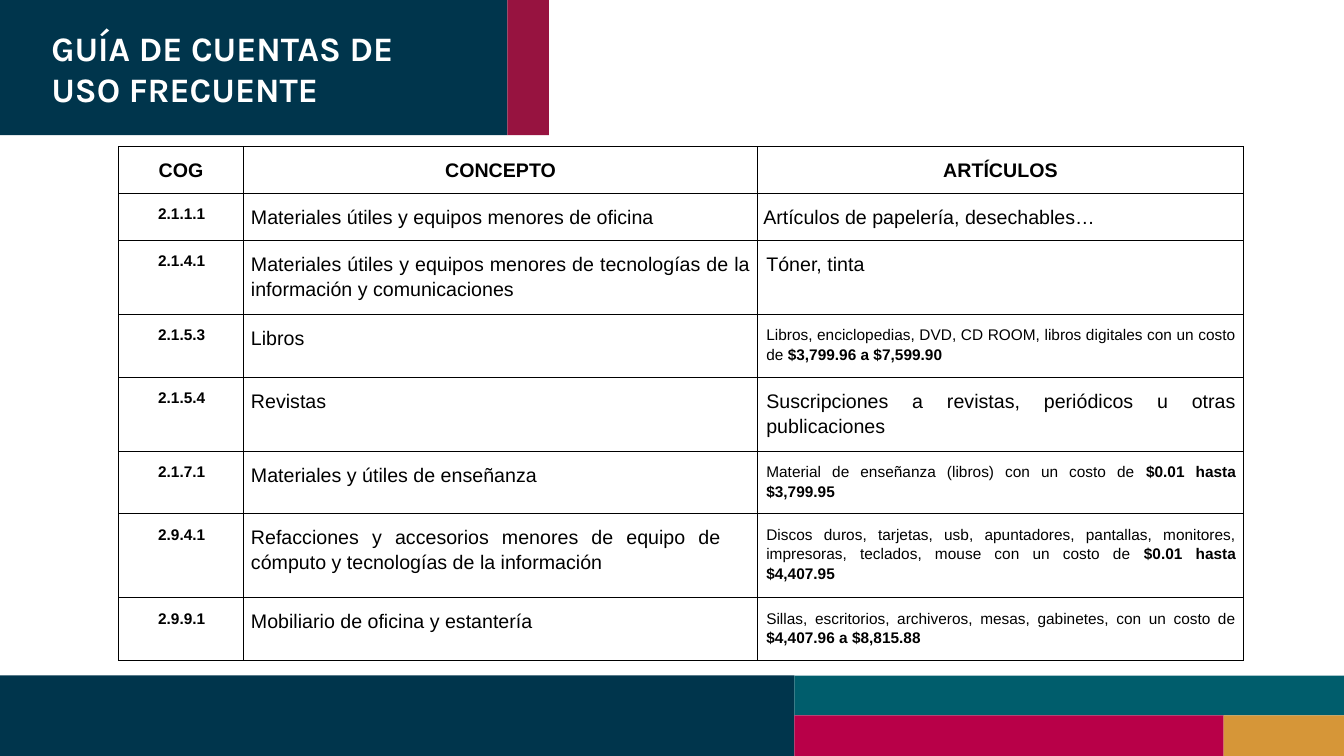
from dataclasses import dataclass

from lxml import etree
from pptx import Presentation
from pptx.dml.color import RGBColor
from pptx.enum import shapes, text
from pptx.oxml import ns
from pptx.util import Pt


@dataclass(frozen=True)
class Theme:
    navy: str = "00354C"
    wine: str = "971340"
    teal: str = "005D6C"
    rose: str = "B80048"
    gold: str = "D69638"
    white: str = "FFFFFF"
    black: str = "000000"
    head: str = "Karla"
    body: str = "Arial"
    title: float = 24.5
    large: float = 14
    small: float = 11


theme = Theme()


def add_run(para, words, size, bold=False, face=theme.body, color=theme.black):
    run = para.add_run()
    run.text = words
    font = run.font
    font.name, font.size, font.bold = face, Pt(size), bold
    font.color.rgb = RGBColor.from_string(color)


def add_edges(cell):
    """Draw a thin black line on all four sides of the cell."""
    props = cell._tc.get_or_add_tcPr()
    for spot, side in enumerate(("lnL", "lnR", "lnT", "lnB")):
        line = etree.Element(ns.qn("a:" + side), w=str(Pt(0.75)))
        fill = etree.SubElement(line, ns.qn("a:solidFill"))
        etree.SubElement(fill, ns.qn("a:srgbClr"), val=theme.black)
        props.insert(spot, line)


prs = Presentation()
prs.slide_width, prs.slide_height = Pt(960), Pt(540)
slide = prs.slides.add_slide(prs.slide_layouts[5])

# Colour bands: left, top, width, height, colour
bands = [
    (0, 0, 362.5, 96.5, theme.navy),
    (362.5, 0, 29.5, 96.5, theme.wine),
    (0, 482.5, 567.5, 57.5, theme.navy),
    (567.5, 482.5, 392.5, 28.5, theme.teal),
    (567.5, 511, 306.5, 29, theme.rose),
    (874, 511, 86, 29, theme.gold),
]
for *box, color in bands:
    band = slide.shapes.add_shape(shapes.MSO_SHAPE.RECTANGLE, *map(Pt, box))
    band.shadow.inherit = False
    band.fill.solid()
    band.fill.fore_color.rgb = RGBColor.from_string(color)
    band.line.fill.background()

# Title, in front of the bands
title = slide.shapes.title
slide.shapes._spTree.append(title._element)
title.left, title.top, title.width, title.height = map(Pt, (36.7, 19.4, 281.5, 59))
frame = title.text_frame
frame.margin_left = frame.margin_right = frame.margin_top = frame.margin_bottom = 0
frame.word_wrap = True
frame.auto_size = text.MSO_AUTO_SIZE.NONE
frame.vertical_anchor = text.MSO_ANCHOR.TOP
para = frame.paragraphs[0]
para.alignment = text.PP_ALIGN.LEFT
add_run(para, "GUÍA DE CUENTAS DE USO FRECUENTE", theme.title, True, theme.head, theme.white)

# Accounts: code, concept, size of the articles, articles, price range
heads = ("COG", "CONCEPTO", "ARTÍCULOS")
big, small = theme.large, theme.small
rows = [
    ("2.1.1.1", "Materiales útiles y equipos menores de oficina",
     big, "Artículos de papelería, desechables…", ""),
    ("2.1.4.1", "Materiales útiles y equipos menores de tecnologías de la "
     "información y comunicaciones", big, "Tóner, tinta", ""),
    ("2.1.5.3", "Libros", small,
     "Libros, enciclopedias, DVD, CD ROOM, libros digitales con un costo de ",
     "$3,799.96 a $7,599.90"),
    ("2.1.5.4", "Revistas", big,
     "Suscripciones a revistas, periódicos u otras publicaciones", ""),
    ("2.1.7.1", "Materiales y útiles de enseñanza", small,
     "Material de enseñanza (libros) con un costo de ", "$0.01 hasta $3,799.95"),
    ("2.9.4.1", "Refacciones y accesorios menores de equipo de cómputo y "
     "tecnologías de la información", small,
     "Discos duros, tarjetas, usb, apuntadores, pantallas, monitores, "
     "impresoras, teclados, mouse con un costo de ", "$0.01 hasta $4,407.95"),
    ("2.9.9.1", "Mobiliario de oficina y estantería", small,
     "Sillas, escritorios, archiveros, mesas, gabinetes, con un costo de ",
     "$4,407.96 a $8,815.88"),
]
wide = (89.3, 367.2, 347)
high = (33.5, 33.5, 53, 44.8, 53, 44.5, 60, 44.8)

grid = slide.shapes.add_table(
    len(high), len(wide), Pt(84.7), Pt(104.6), Pt(sum(wide)), Pt(sum(high))).table
grid.horz_banding = False
for col, width in zip(grid.columns, wide):
    col.width = Pt(width)
for row, height in zip(grid.rows, high):
    row.height = Pt(height)

for cell in grid.iter_cells():
    cell.fill.background()
    add_edges(cell)
    cell.margin_left = cell.margin_right = Pt(5.3)
    cell.margin_top = cell.margin_bottom = Pt(7.2)
    para = cell.text_frame.paragraphs[0]
    para.line_spacing = 1.15
    para.alignment = text.PP_ALIGN.JUSTIFY

for spot, head in enumerate(heads):
    para = grid.cell(0, spot).text_frame.paragraphs[0]
    para.alignment = text.PP_ALIGN.CENTER
    add_run(para, head, big, True)

for spot, (code, concept, size, goods, price) in enumerate(rows, 1):
    first, second, third = (
        grid.cell(spot, col).text_frame.paragraphs[0] for col in range(3))
    first.alignment = text.PP_ALIGN.CENTER
    for para in (first, third):
        para._p.get_or_add_pPr().set("marL", str(Pt(0.9)))
    add_run(first, code, small, True)
    add_run(second, concept, big)
    add_run(third, goods, size)
    if price:
        add_run(third, price, size, True)

# The first articles sit further left; one concept ends short of its cell
grid.cell(1, 2).margin_left = Pt(4)
grid.cell(1, 2).text_frame.paragraphs[0]._p.pPr.set("marL", "0")
grid.cell(6, 1).text_frame.paragraphs[0]._p.get_or_add_pPr().set("marR", str(Pt(21)))

prs.save("out.pptx")
